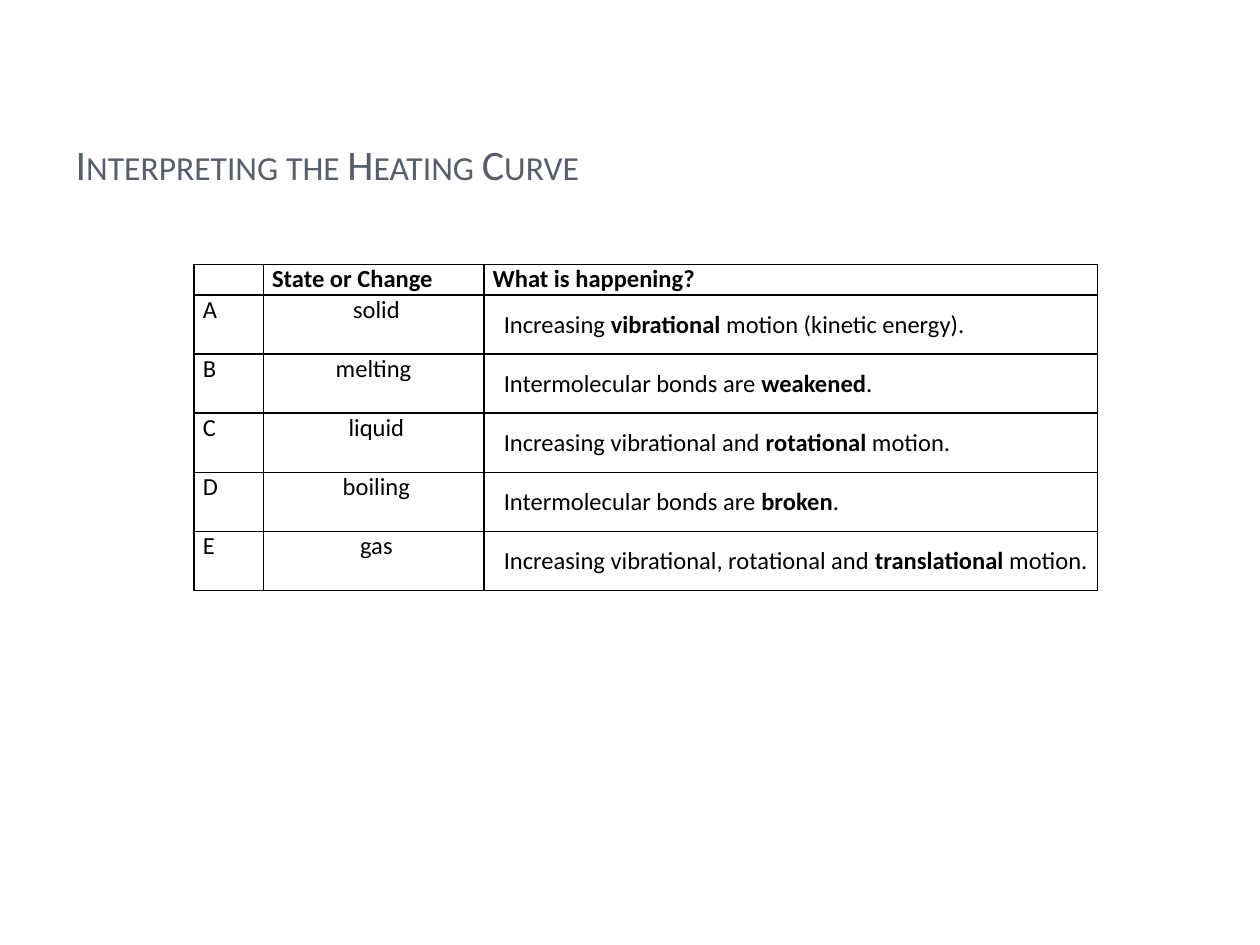
from dataclasses import dataclass

from lxml import etree
from pptx import Presentation, util as u
from pptx.dml.color import RGBColor
from pptx.enum import text
from pptx.oxml import ns

TITLE = "Interpreting the Heating Curve"
HEADS = ["", "State or Change", "What is happening?"]
# letter, state, then plain, bold and plain parts of the note
STAGES = [
    ("A", " solid", ("Increasing ", "vibrational", " motion (kinetic energy).")),
    ("B", " melting ", ("Intermolecular bonds are ", "weakened", ".")),
    ("C", " liquid", ("Increasing vibrational and ", "rotational", " motion.")),
    ("D", " boiling", ("Intermolecular bonds are ", "broken", ".")),
    ("E", " gas", ("Increasing vibrational, rotational and ",
                   "translational", " motion.")),
]


@dataclass(frozen=True)
class Theme:
    font: str = "Calibri"
    head: str = "575F6D"
    ink: str = "000000"
    big: int = 24
    body: int = 14
    line: int = 1


T = Theme()
WIDE, HIGH = 10, 7.5
LEFT, TOP = 1.54, 2.1
COLS = (0.55, 1.75, 4.87)
HEAD_H, ROW_H = 0.24, 0.47
NOTE_H, NOTE_GAP = 0.34, 0.06


def write(para, words, size=T.body, color=T.ink, bold=False):
    run = para.add_run()
    run.text = words
    font = run.font
    font.name, font.size, font.bold = T.font, u.Pt(size), bold
    font.color.rgb = RGBColor.from_string(color)
    return run


def border(cell):
    props = cell._tc.get_or_add_tcPr()
    for side in ("lnL", "lnR", "lnT", "lnB"):
        line = etree.SubElement(props, ns.qn("a:" + side), w=str(u.Pt(T.line)))
        fill = etree.SubElement(line, ns.qn("a:solidFill"))
        etree.SubElement(fill, ns.qn("a:srgbClr"), val=T.ink)


def fill_cell(cell, words, bold, center):
    border(cell)
    cell.fill.background()
    cell.margin_left = cell.margin_right = u.Inches(0.07)
    cell.margin_top = cell.margin_bottom = 0
    para = cell.text_frame.paragraphs[0]
    if center:
        para.alignment = text.PP_ALIGN.CENTER
    if words:
        write(para, words, bold=bold)
    else:
        # keeps an empty cell from stretching its row
        etree.SubElement(para._p, ns.qn("a:endParaRPr"), sz=str(T.body * 100))


def add_title(slide):
    title = slide.shapes.title
    title.left, title.top = u.Inches(0.5), u.Inches(0.3)
    title.width, title.height = u.Inches(8.17), u.Inches(1.25)
    frame = title.text_frame
    frame.vertical_anchor = text.MSO_ANCHOR.BOTTOM
    para = frame.paragraphs[0]
    para.alignment = text.PP_ALIGN.LEFT
    run = write(para, TITLE, T.big, T.head)
    run.font._element.set("cap", "small")


def add_grid(slide):
    rows = [HEADS] + [(key, state, "") for key, state, _ in STAGES]
    high = HEAD_H + ROW_H * len(STAGES)
    grid = slide.shapes.add_table(
        len(rows), len(COLS), u.Inches(LEFT), u.Inches(TOP),
        u.Inches(sum(COLS)), u.Inches(high)).table
    grid.horz_banding = False
    for col, wide in zip(grid.columns, COLS):
        col.width = u.Inches(wide)
    for r, row in enumerate(rows):
        grid.rows[r].height = u.Inches(ROW_H if r else HEAD_H)
        for c, words in enumerate(row):
            fill_cell(grid.cell(r, c), words, r == 0, r > 0 and c == 1)


def add_notes(slide):
    left = LEFT + sum(COLS[:2]) + NOTE_GAP
    for i, (_, _, parts) in enumerate(STAGES):
        top = TOP + HEAD_H + i * ROW_H + NOTE_GAP
        box = slide.shapes.add_textbox(
            u.Inches(left), u.Inches(top), u.Inches(COLS[2]), u.Inches(NOTE_H))
        frame = box.text_frame
        frame.word_wrap = True
        frame.margin_right = 0
        for j, words in enumerate(parts):
            write(frame.paragraphs[0], words, bold=j == 1)


def main():
    deck = Presentation()
    deck.slide_width, deck.slide_height = u.Inches(WIDE), u.Inches(HIGH)
    slide = deck.slides.add_slide(deck.slide_layouts[5])
    add_title(slide)
    add_grid(slide)
    add_notes(slide)
    deck.save("out.pptx")


if __name__ == "__main__":
    main()
